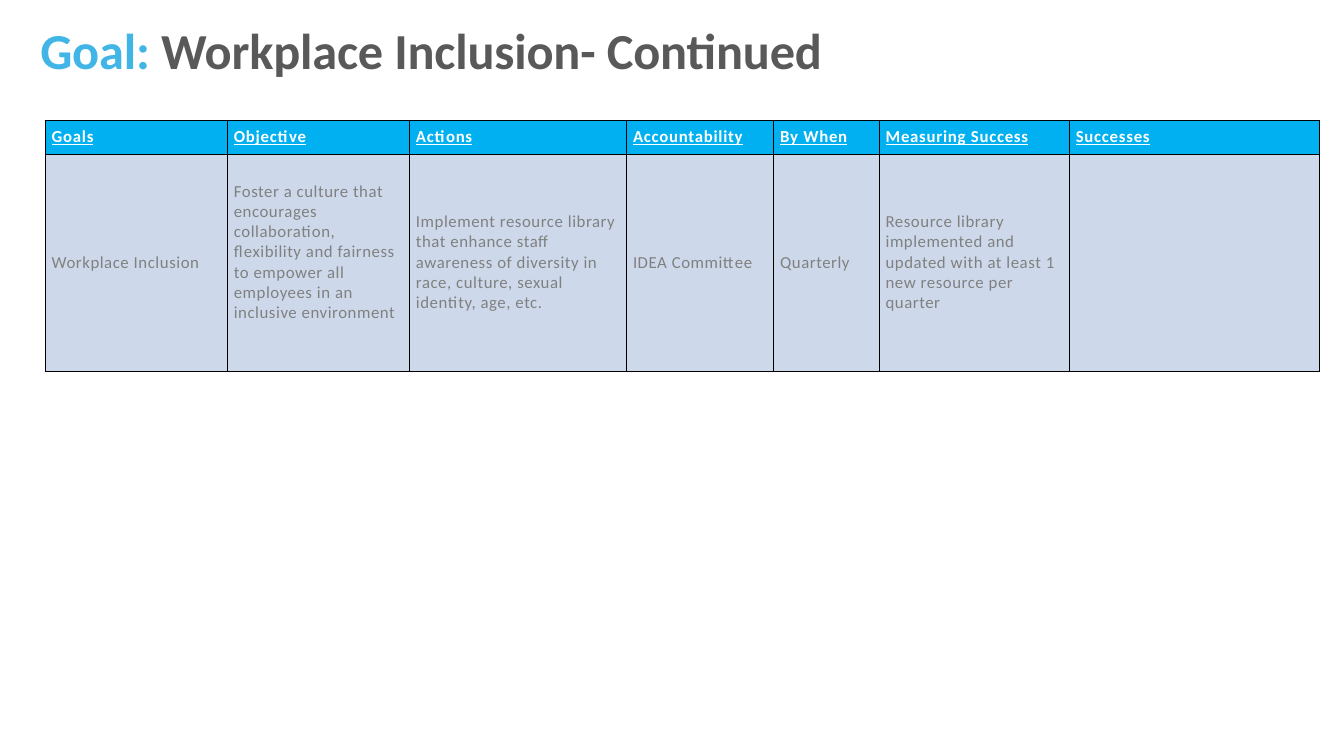
from dataclasses import dataclass

from lxml import etree
from pptx import Presentation
from pptx.dml.color import RGBColor
from pptx.enum.text import MSO_ANCHOR, MSO_AUTO_SIZE
from pptx.oxml.ns import qn
from pptx.table import _Cell
from pptx.text.text import _Paragraph
from pptx.util import Inches, Pt

MIDDLE = MSO_ANCHOR.MIDDLE
FIT_SHAPE = MSO_AUTO_SIZE.SHAPE_TO_FIT_TEXT
FONT = "Calibri"
COLORS = {
    "accent": "41B6E6",
    "title": "595959",
    "header_fill": "00B0F0",
    "header_text": "FFFFFF",
    "body_fill": "CDD9EA",
    "body_text": "808080",
    "border": "000000",
}
ROW_HEIGHTS = (0.34, 3.23)
CELL_MARGIN = 0.1


@dataclass(frozen=True)
class PlanColumn:
    heading: str
    detail: str
    width: float
    bottom_margin: float = CELL_MARGIN


PLAN = (
    PlanColumn("Goals", "Workplace Inclusion", 2.71),
    PlanColumn(
        "Objective",
        "Foster a culture that encourages collaboration, flexibility and "
        "fairness to empower all employees in an inclusive environment",
        2.71,
        bottom_margin=0.4,
    ),
    PlanColumn(
        "Actions",
        "Implement resource library that enhance staff awareness of diversity "
        "in race, culture, sexual identity, age, etc.",
        3.23,
    ),
    PlanColumn("Accountability", "IDEA Committee", 2.19),
    PlanColumn("By When", "Quarterly", 1.57),
    PlanColumn(
        "Measuring Success",
        "Resource library implemented and updated with at least 1 new "
        "resource per quarter",
        2.83,
    ),
    PlanColumn("Successes", "", 3.73),
)


def write(paragraph: _Paragraph, text: str, *, size: float, color: str,
          bold: bool = False, underline: bool = False,
          tracking: float = 0) -> None:
    paragraph.line_spacing = Pt(size * 1.2)
    run = paragraph.add_run()
    run.text = text
    font = run.font
    font.name = FONT
    font.size = Pt(size)
    font.bold = bold
    font.underline = underline
    font.color.rgb = RGBColor.from_string(COLORS[color])
    run._r.get_or_add_rPr().set("spc", str(round(tracking * 100)))


def outline(cell: _Cell) -> None:
    properties = cell._tc.get_or_add_tcPr()
    for position, side in enumerate(("lnL", "lnR", "lnT", "lnB")):
        line = etree.Element(qn(f"a:{side}"), w=str(Pt(1)))
        fill = etree.SubElement(line, qn("a:solidFill"))
        etree.SubElement(fill, qn("a:srgbClr"), val=COLORS["border"])
        properties.insert(position, line)


def fill_cell(cell: _Cell, text: str, *, fill: str, color: str,
              tracking: float, emphasis: bool = False,
              bottom_margin: float = CELL_MARGIN) -> None:
    cell.fill.solid()
    cell.fill.fore_color.rgb = RGBColor.from_string(COLORS[fill])
    outline(cell)
    cell.vertical_anchor = MIDDLE
    cell.margin_left = cell.margin_right = cell.margin_top = Inches(CELL_MARGIN)
    cell.margin_bottom = Inches(bottom_margin)
    if text:
        write(cell.text_frame.paragraphs[0], text, size=18, color=color,
              bold=emphasis, underline=emphasis, tracking=tracking)


def main() -> None:
    deck = Presentation()
    deck.slide_width, deck.slide_height = Inches(20), Inches(11.25)
    slide = deck.slides.add_slide(deck.slide_layouts[6])

    title = slide.shapes.add_textbox(
        Inches(0.6), Inches(0.28), Inches(16.89), Inches(1.1)).text_frame
    title.word_wrap = True
    title.auto_size = FIT_SHAPE
    title.margin_left = title.margin_right = Inches(0)
    title.margin_top = title.margin_bottom = Inches(0)
    for text, color in (("Goal: ", "accent"),
                        ("Workplace Inclusion- Continued", "title")):
        write(title.paragraphs[0], text, size=54, color=color, bold=True,
              tracking=-0.2)

    plan_table = slide.shapes.add_table(
        len(ROW_HEIGHTS), len(PLAN), Inches(0.67), Inches(1.79),
        Inches(sum(column.width for column in PLAN)),
        Inches(sum(ROW_HEIGHTS))).table
    plan_table.horz_banding = False
    for row, height in zip(plan_table.rows, ROW_HEIGHTS):
        row.height = Inches(height)
    for index, column in enumerate(PLAN):
        plan_table.columns[index].width = Inches(column.width)
        fill_cell(plan_table.cell(0, index), column.heading,
                  fill="header_fill", color="header_text", tracking=0.8,
                  emphasis=True)
        fill_cell(plan_table.cell(1, index), column.detail,
                  fill="body_fill", color="body_text", tracking=0.6,
                  bottom_margin=column.bottom_margin)

    deck.save("out.pptx")


if __name__ == "__main__":
    main()
